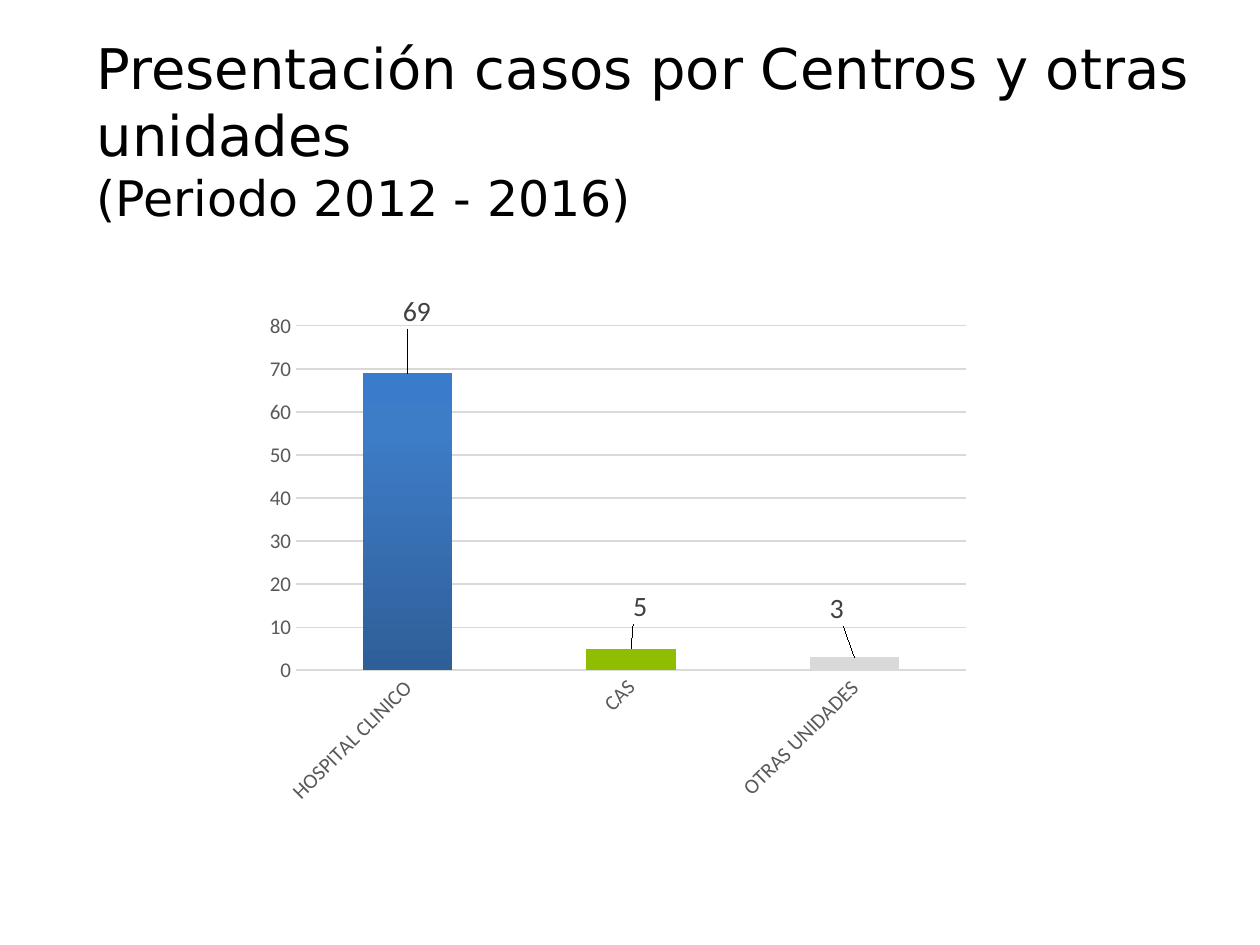
from copy import deepcopy
from dataclasses import dataclass

from pptx import Presentation
from pptx.chart.data import CategoryChartData as ChartData
from pptx.dml.color import RGBColor as RGB
from pptx.enum.chart import XL_CHART_TYPE as ChartType, XL_LABEL_POSITION as LabelPos
from pptx.enum.chart import XL_TICK_MARK as Tick
from pptx.enum.text import MSO_ANCHOR as Anchor, MSO_AUTO_SIZE as AutoSize
from pptx.oxml import parse_xml
from pptx.oxml.ns import nsdecls
from pptx.util import Cm, Pt


@dataclass(frozen=True)
class Theme:
    heading_font: str = "DejaVu Sans"
    chart_font: str = "Calibri"
    ink: str = "000000"
    axis_text: str = "595959"
    label_text: str = "404040"
    rule: str = "D9D9D9"
    hospital: tuple = ((0, "2F5F99"), (0.8, "3D7CC7"), (1, "3A7CCB"))
    cas: str = "8FBE00"
    others: str = "D9D9D9"
    title_size: int = 32
    period_size: int = 28
    axis_size: int = 12
    label_size: int = 16


def set_values(target, values):
    for name, value in values.items():
        setattr(target, name, value)


def manual_layout(**settings):
    entries = "".join(f'<c:{name} val="{value}"/>' for name, value in settings.items())
    return parse_xml(
        f'<c:layout {nsdecls("c")}><c:manualLayout>{entries}</c:manualLayout></c:layout>'
    )


class SlideBuilder:
    def __init__(self, slide, theme):
        self.slide = slide
        self.theme = theme

    def style_font(self, font, family, size, color):
        set_values(font, {"name": family, "size": Pt(size)})
        font.color.rgb = RGB.from_string(color)

    def heading(self, box, lines):
        frame = self.slide.shapes.add_textbox(*map(Cm, box)).text_frame
        set_values(frame, {
            "word_wrap": True,
            "auto_size": AutoSize.SHAPE_TO_FIT_TEXT,
            "vertical_anchor": Anchor.MIDDLE,
        })
        for index, (wording, size) in enumerate(lines):
            paragraph = frame.add_paragraph() if index else frame.paragraphs[0]
            run = paragraph.add_run()
            run.text = wording
            self.style_font(run.font, self.theme.heading_font, size, self.theme.ink)

    def column_chart(self, box, cases, label_offsets):
        theme = self.theme
        case_data = ChartData()
        case_data.categories = list(cases)
        case_data.add_series("Series 1", cases.values())
        chart = self.slide.shapes.add_chart(
            ChartType.COLUMN_CLUSTERED, *map(Cm, box), case_data
        ).chart
        set_values(chart, {"has_legend": False, "has_title": False})
        self.style_font(chart.font, theme.chart_font, theme.axis_size, theme.ink)

        plot = chart.plots[0]
        set_values(plot, {"gap_width": 150, "vary_by_categories": False})
        self.axes(chart)
        self.columns(plot.series[0])
        self.labels(chart, plot.series[0], label_offsets)

        plot_area = chart.element.xpath("c:chart/c:plotArea")[0]
        for automatic in plot_area.xpath("c:layout"):
            plot_area.remove(automatic)
        plot_area.insert(0, manual_layout(
            layoutTarget="inner", xMode="edge", yMode="edge",
            x=0.135, y=0.201, w=0.742, h=0.535,
        ))

    def axes(self, chart):
        theme = self.theme
        centres, counts = chart.category_axis, chart.value_axis
        for axis in (centres, counts):
            set_values(axis, {"major_tick_mark": Tick.NONE, "minor_tick_mark": Tick.NONE})
            self.style_font(
                axis.tick_labels.font, theme.chart_font, theme.axis_size, theme.axis_text
            )
        set_values(counts, {
            "minimum_scale": 0, "maximum_scale": 80, "major_unit": 10,
            "has_major_gridlines": True,
        })
        counts.format.line.fill.background()
        for line, width in ((centres.format.line, 1), (counts.major_gridlines.format.line, 0.75)):
            line.color.rgb = RGB.from_string(theme.rule)
            line.width = Pt(width)
        chart.element.xpath(".//c:catAx/c:txPr/a:bodyPr")[0].set("rot", "-2700000")

    def columns(self, series):
        fill = series.format.fill
        fill.gradient()
        fill.gradient_angle = 90
        stops = series.format.element.xpath(".//a:gsLst")[0] if hasattr(
            series.format, "element") else series.element.xpath(".//a:gsLst")[0] if hasattr(
            series, "element") else series._element.xpath(".//a:gsLst")[0]
        stops.append(deepcopy(stops[0]))
        for stop, (position, color) in zip(fill.gradient_stops, self.theme.hospital):
            stop.color.rgb = RGB.from_string(color)
            stop.position = position
        for index, color in enumerate((self.theme.cas, self.theme.others), start=1):
            column = series.points[index].format.fill
            column.solid()
            column.fore_color.rgb = RGB.from_string(color)

    def labels(self, chart, series, offsets):
        theme = self.theme
        set_values(series.data_labels, {"show_value": True, "position": LabelPos.OUTSIDE_END})
        self.style_font(
            series.data_labels.font, theme.chart_font, theme.label_size, theme.label_text
        )
        for index, (x, y) in enumerate(offsets):
            label = series.points[index].data_label
            self.style_font(label.font, theme.chart_font, theme.label_size, theme.label_text)
            label.position = LabelPos.OUTSIDE_END
            entry = chart.element.xpath(f".//c:dLbl[c:idx/@val='{index}']")[0]
            entry.insert(1, manual_layout(x=x, y=y))


def main():
    theme = Theme()
    deck = Presentation()
    set_values(deck, {"slide_width": Cm(25.4), "slide_height": Cm(19.05)})
    builder = SlideBuilder(deck.slides.add_slide(deck.slide_layouts[6]), theme)
    builder.column_chart(
        (3.51, 3.96, 18.21, 12.98),
        {"HOSPITAL CLINICO": 69, "CAS": 5, "OTRAS UNIDADES": 3},
        ((0.01, -0.06), (0.01, -0.03), (-0.02, -0.04)),
    )
    builder.heading((1.7, 0.53, 23.19, 4.19), (
        ("Presentación casos por Centros y otras unidades", theme.title_size),
        ("(Periodo 2012 - 2016)", theme.period_size),
    ))
    deck.save("out.pptx")


if __name__ == "__main__":
    main()
